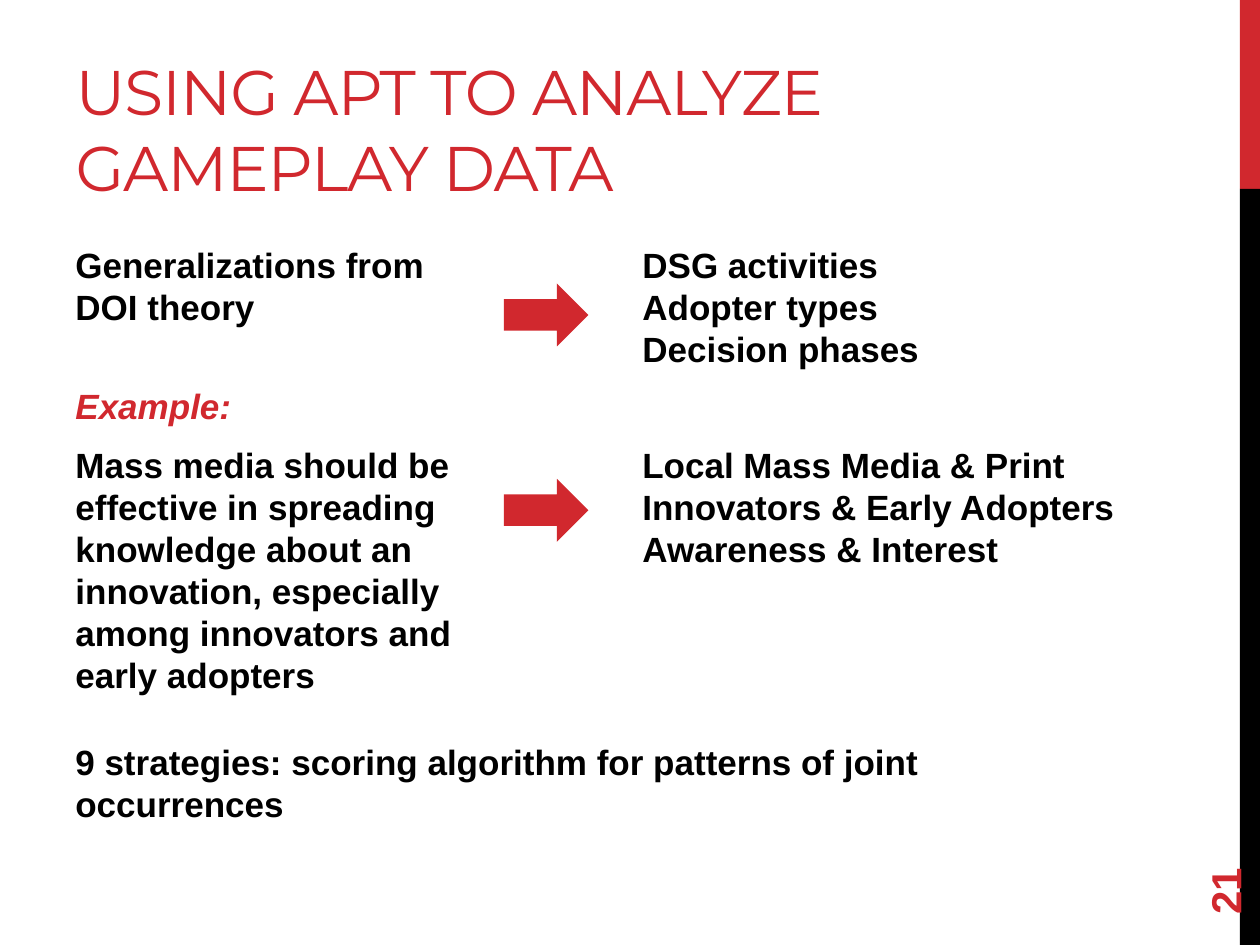
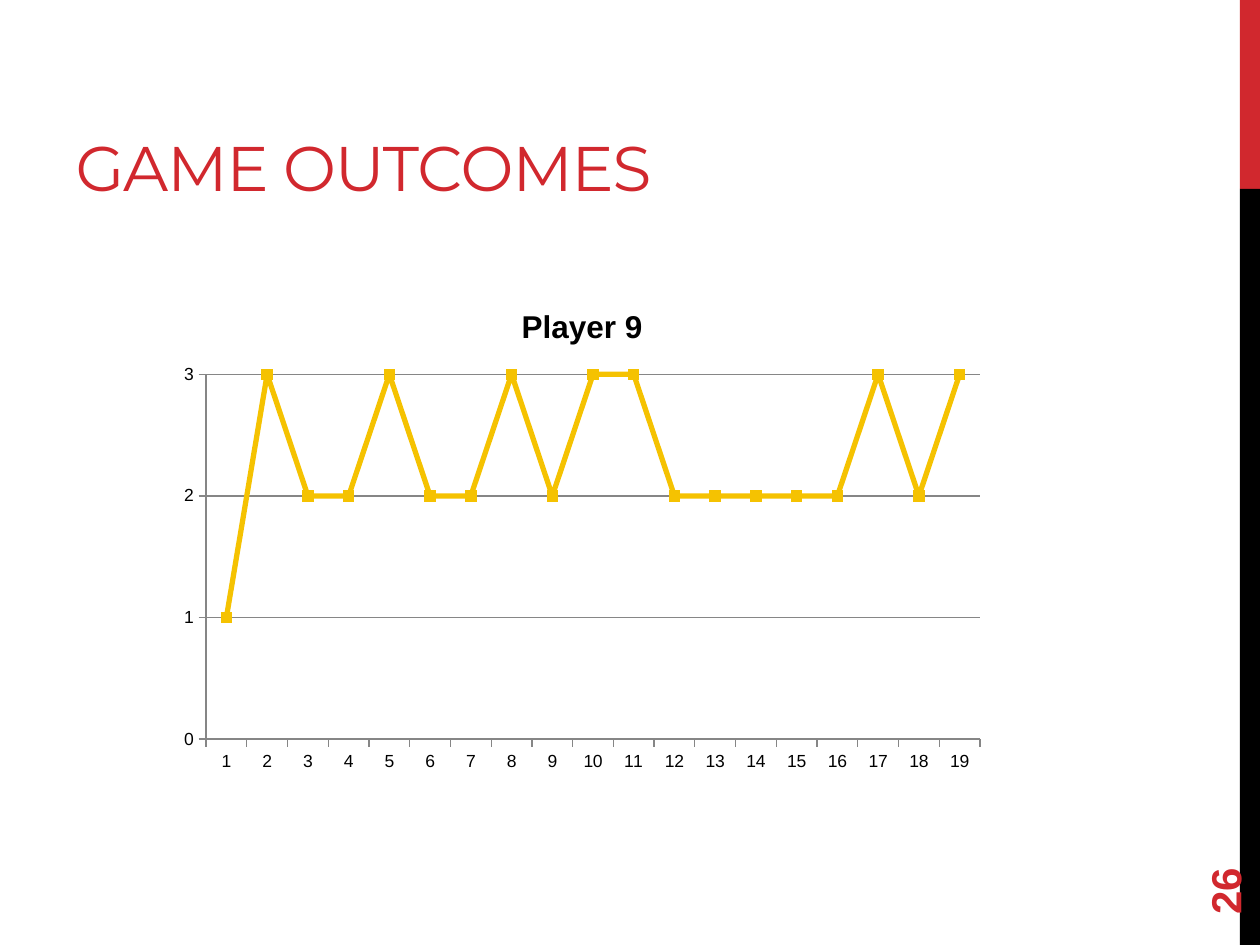
from lxml import etree
from pptx import Presentation
from pptx.chart.data import CategoryChartData
from pptx.dml.color import RGBColor
from pptx.enum.chart import XL_CHART_TYPE, XL_MARKER_STYLE, XL_TICK_MARK
from pptx.enum.shapes import MSO_SHAPE
from pptx.enum.text import MSO_ANCHOR, MSO_AUTO_SIZE, PP_ALIGN
from pptx.oxml.ns import qn
from pptx.util import Inches, Pt

LINE_MARKERS = XL_CHART_TYPE.LINE_MARKERS
SQUARE = XL_MARKER_STYLE.SQUARE
TICK_OUTSIDE = XL_TICK_MARK.OUTSIDE
RECTANGLE, RIGHT_ARROW = MSO_SHAPE.RECTANGLE, MSO_SHAPE.RIGHT_ARROW
TOP, MIDDLE, BOTTOM = MSO_ANCHOR.TOP, MSO_ANCHOR.MIDDLE, MSO_ANCHOR.BOTTOM

COLORS = {"red": "D1282E", "black": "000000", "gold": "F5C201", "gray": "868686"}
TITLE_FONT, BODY_FONT = "Montserrat", "Arial"

# Content
STRATEGY_TITLE, STRATEGY_NUMBER = "USING APT TO ANALYZE GAMEPLAY DATA", "21"
THEORY = "Generalizations from DOI theory"
CODES = "DSG activities\nAdopter types\nDecision phases"
EXAMPLE_LABEL = "Example:"
EXAMPLE = ("Mass media should be effective in spreading knowledge about an innovation, "
           "especially among innovators and early adopters")
EXAMPLE_CODES = "Local Mass Media & Print\nInnovators & Early Adopters\nAwareness & Interest"
SCORING = "9 strategies: scoring algorithm for patterns of joint occurrences"

OUTCOME_TITLE, OUTCOME_NUMBER = "GAME OUTCOMES", "26"
PLAYER = "Player 9"
OUTCOMES = [1, 3, 2, 2, 3, 2, 2, 3, 2, 3, 3, 2, 2, 2, 2, 2, 3, 2, 3]

# Grid, in inches
SLIDE_WIDTH, SLIDE_HEIGHT = 10, 7.5
LEFT, ARROW_LEFT, RIGHT = 0.5, 4, 5
BAND_WIDTH = 0.16
BAND_SPLIT = SLIDE_HEIGHT / 5
ARROW_SIZE = (0.67, 0.5)
ARROW_TOPS = (2.25, 3.8)


def rgb(name):
    return RGBColor.from_string(COLORS[name])


def inches(*lengths):
    return [Inches(length) for length in lengths]


def style_font(font, name, size, color, bold=False, italic=False):
    font.name, font.size, font.bold, font.italic = name, Pt(size), bold, italic
    font.color.rgb = rgb(color)


def prepare_frame(shape, anchor):
    frame = shape.text_frame
    frame.word_wrap = True
    frame.auto_size = MSO_AUTO_SIZE.NONE
    frame.vertical_anchor = anchor
    return frame


def add_text(slide, box, *paragraphs, size=20, anchor=TOP, before=4, after=6):
    """Add bold body text; each paragraph is (text, color, italic)."""
    shape = slide.shapes.add_textbox(*inches(*box))
    frame = prepare_frame(shape, anchor)
    for index, (text, color, italic) in enumerate(paragraphs):
        paragraph = frame.add_paragraph() if index else frame.paragraphs[0]
        paragraph.text = text
        paragraph.space_before, paragraph.space_after = Pt(before), Pt(after)
        style_font(paragraph.font, BODY_FONT, size, color, True, italic)
    return shape


def add_filled_shape(slide, kind, box, color):
    shape = slide.shapes.add_shape(kind, *inches(*box))
    shape.shadow.inherit = False
    shape.fill.solid()
    shape.fill.fore_color.rgb = rgb(color)
    shape.line.fill.background()


def add_slide(presentation, title, number):
    """Add a slide with the shared bands, title style and page number."""
    slide = presentation.slides.add_slide(presentation.slide_layouts.get_by_name("Title Only"))
    band_left = SLIDE_WIDTH - BAND_WIDTH
    for top, bottom, color in ((0, BAND_SPLIT, "red"), (BAND_SPLIT, SLIDE_HEIGHT, "black")):
        add_filled_shape(slide, RECTANGLE, (band_left, top, BAND_WIDTH, bottom - top), color)

    placeholder = slide.shapes.title
    placeholder.left, placeholder.top, placeholder.width, placeholder.height = inches(
        LEFT, 0.17, 6.83, 1.5)
    paragraph = prepare_frame(placeholder, BOTTOM).paragraphs[0]
    paragraph.text = title
    paragraph.alignment = PP_ALIGN.LEFT
    style_font(paragraph.font, TITLE_FONT, 36, "red")
    for properties in paragraph.runs[0].font, paragraph.font:
        properties._element.set("spc", "-60")

    page_number = add_text(slide, (9, 6.44, 1.44, 0.4), (number, "red", False),
                           size=24, anchor=MIDDLE, before=0, after=0)
    page_number.rotation = 270
    return slide


def add_strategy_slide(presentation):
    slide = add_slide(presentation, STRATEGY_TITLE, STRATEGY_NUMBER)
    add_text(slide, (LEFT, 1.88, 3.5, 1.5), (THEORY, "black", False))
    add_text(slide, (RIGHT, 1.88, 4, 1.62), (CODES, "black", False))
    add_text(slide, (LEFT, 3, 3.25, 2.61),
             (EXAMPLE_LABEL, "red", True), (EXAMPLE, "black", False))
    add_text(slide, (RIGHT, 3.47, 4.17, 1.11), (EXAMPLE_CODES, "black", False),
             before=0, after=0)
    add_text(slide, (LEFT, 5.83, 8.5, 0.75), (SCORING, "black", False))
    for top in ARROW_TOPS:
        add_filled_shape(slide, RIGHT_ARROW, (ARROW_LEFT, top, *ARROW_SIZE), "red")


def add_outcome_slide(presentation):
    slide = add_slide(presentation, OUTCOME_TITLE, OUTCOME_NUMBER)
    data = CategoryChartData()
    data.categories = [str(game) for game in range(1, len(OUTCOMES) + 1)]
    data.add_series(PLAYER, OUTCOMES)
    chart = slide.shapes.add_chart(LINE_MARKERS, *inches(1.33, 2.25, 6.58, 3.95), data).chart
    style_font(chart.font, BODY_FONT, 10, "black")
    chart.has_legend = False
    chart.has_title = True
    heading = chart.chart_title.text_frame.paragraphs[0]
    heading.text = PLAYER
    style_font(heading.font, BODY_FONT, 18, "black", True)

    values = chart.value_axis
    values.minimum_scale, values.maximum_scale, values.major_unit = 0, 3, 1
    values.has_major_gridlines = True
    for axis in (chart.category_axis, values):
        axis.major_tick_mark = TICK_OUTSIDE
    for line in (chart.category_axis.format.line, values.format.line,
                 values.major_gridlines.format.line):
        line.color.rgb = rgb("gray")
        line.width = Pt(0.75)

    plot = chart.plots[0]
    plot.vary_by_categories = False
    series = plot.series[0]
    series.smooth = False
    series.format.line.color.rgb = rgb("gold")
    series.format.line.width = Pt(3)
    series.marker.style, series.marker.size = SQUARE, 6
    series.marker.format.fill.solid()
    series.marker.format.fill.fore_color.rgb = rgb("gold")
    series.marker.format.line.color.rgb = rgb("gold")


def main():
    presentation = Presentation()
    presentation.slide_width, presentation.slide_height = inches(SLIDE_WIDTH, SLIDE_HEIGHT)
    add_strategy_slide(presentation)
    add_outcome_slide(presentation)
    presentation.save("out.pptx")


if __name__ == "__main__":
    main()
